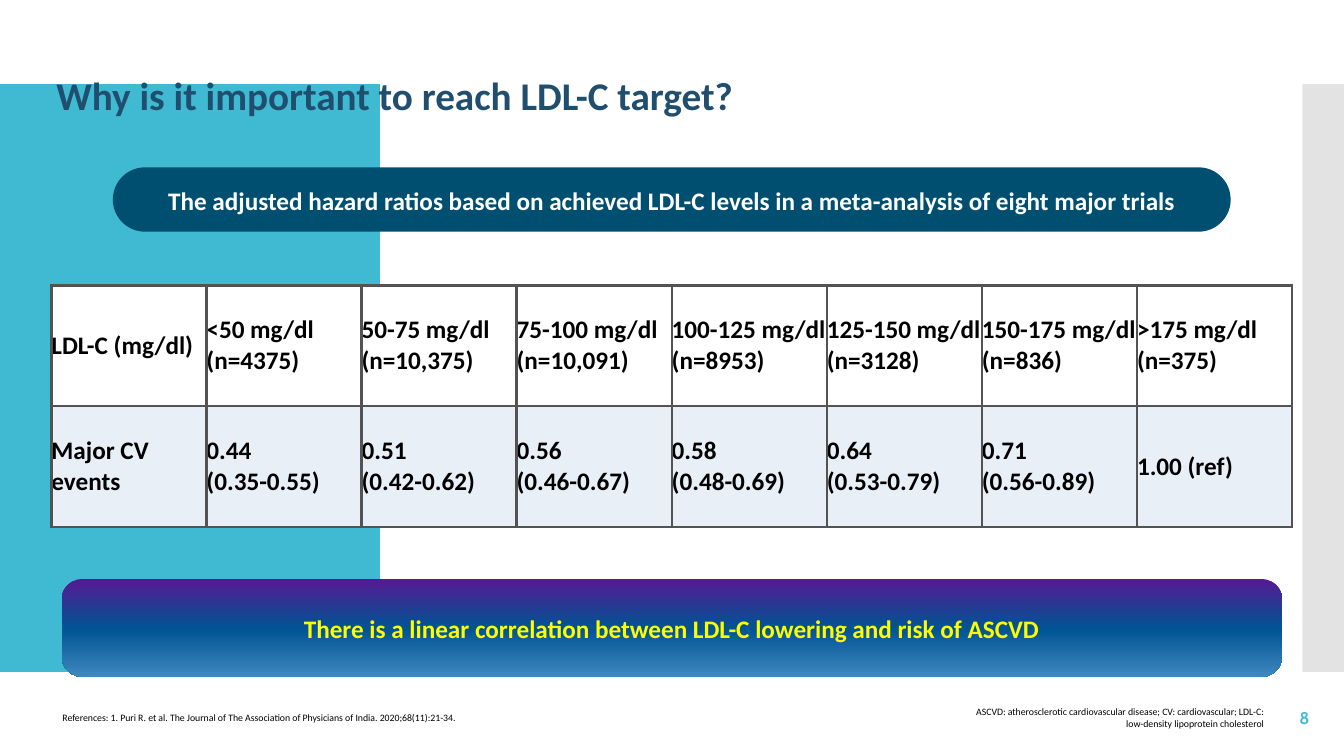
from copy import deepcopy
from dataclasses import dataclass
from typing import Optional

from lxml.etree import SubElement
from pptx import Presentation
from pptx.dml.color import RGBColor
from pptx.enum.shapes import MSO_SHAPE
from pptx.enum.text import MSO_ANCHOR, PP_ALIGN
from pptx.oxml.ns import qn
from pptx.util import Pt


@dataclass(frozen=True)
class Theme:
    font: str = "Calibri"
    number_font: str = "Cabin"
    title_size: float = 28
    body_size: float = 18
    number_size: float = 12
    note_size: float = 7
    teal: str = "40BAD2"
    gray: str = "C8C8C8"
    navy: str = "004F71"
    title: str = "204E6E"
    yellow: str = "FFFB00"
    white: str = "FFFFFF"
    black: str = "000000"
    row_tint: str = "E9EFF7"
    border: str = "535353"
    gradient: tuple = ((0.01, "531B93"), (0.51, "005493"), (1.0, "3F87BF"))


THEME = Theme()


@dataclass(frozen=True)
class Frame:
    left: float
    top: float
    width: float
    height: float

    def lengths(self) -> tuple:
        return Pt(self.left), Pt(self.top), Pt(self.width), Pt(self.height)


@dataclass(frozen=True)
class Panel:
    frame: Frame
    color: Optional[str] = None
    rounding: Optional[float] = None
    opacity: Optional[int] = None


@dataclass(frozen=True)
class Label:
    frame: Frame
    text: str
    size: float
    color: str
    bold: bool = True
    align: PP_ALIGN = PP_ALIGN.LEFT
    font: str = THEME.font
    wrap: bool = True


PANELS = (
    Panel(Frame(0, 60, 271.4, 420), THEME.teal),
    Panel(Frame(930.2, 60, 29.8, 420), THEME.gray, opacity=50),
    Panel(Frame(80.6, 119.5, 798.5, 46), THEME.navy, rounding=0.5),
    Panel(Frame(44, 413.5, 872, 70), rounding=0.214),
)

LABELS = (
    Label(Frame(36.7, 50.4, 791.3, 35.3), "Why is it important to reach LDL-C target?",
          THEME.title_size, THEME.title),
    Label(Frame(920.9, 502.4, 18, 21), "8", THEME.number_size, THEME.teal,
          align=PP_ALIGN.RIGHT, font=THEME.number_font),
    Label(Frame(41, 505.4, 352.8, 14.4),
          "References: 1. Puri R. et al. The Journal of The Association of Physicians of India. "
          "2020;68(11):21-34.", THEME.note_size, THEME.black, bold=False),
    Label(Frame(681.8, 500.4, 224.6, 23.8),
          "ASCVD: atherosclerotic cardiovascular disease; CV: cardiovascular; "
          "LDL-C: low-density lipoprotein cholesterol",
          THEME.note_size, THEME.black, bold=False, align=PP_ALIGN.RIGHT),
    Label(Frame(110.2, 435.9, 739.4, 26),
          "There is a linear correlation between LDL-C lowering and risk of ASCVD",
          THEME.body_size, THEME.yellow, align=PP_ALIGN.CENTER),
    Label(Frame(115.2, 129.9, 729.4, 26),
          "The adjusted hazard ratios based on achieved LDL-C levels in a meta-analysis of "
          "eight major trials", THEME.body_size, THEME.white, align=PP_ALIGN.CENTER, wrap=False),
)

TABLE_FRAME = Frame(36.7, 203.8, 886.4, 172.6)
ROWS = (
    ("LDL-C (mg/dl)", "<50 mg/dl (n=4375)", "50-75 mg/dl (n=10,375)", "75-100 mg/dl (n=10,091)",
     "100-125 mg/dl (n=8953)", "125-150 mg/dl (n=3128)", "150-175 mg/dl (n=836)",
     ">175 mg/dl (n=375)"),
    ("Major CV events", "0.44\n(0.35-0.55)", "0.51\n(0.42-0.62)", "0.56\n(0.46-0.67)",
     "0.58\n(0.48-0.69)", "0.64\n(0.53-0.79)", "0.71\n(0.56-0.89)", "1.00 (ref)"),
)
ROW_FILLS = (THEME.white, THEME.row_tint)


def add_span(para, text: str, size: float, color: str, bold: bool, font: str) -> None:
    """Add one styled run to a paragraph."""
    span = para.add_run()
    span.text = text
    span.font.name = font
    span.font.size = Pt(size)
    span.font.bold = bold
    span.font.color.rgb = RGBColor.from_string(color)


def fill_gradient(shape) -> None:
    """Fill a shape with the theme gradient from top to bottom."""
    fill = shape.fill
    fill.gradient()
    fill.gradient_angle = 270
    stop_list = shape._element.spPr.find(qn("a:gradFill")).find(qn("a:gsLst"))
    stop_list.append(deepcopy(stop_list[-1]))
    for stop, (position, color) in zip(fill.gradient_stops, THEME.gradient):
        stop.position = position
        stop.color.rgb = RGBColor.from_string(color)


def add_panel(page, panel: Panel) -> None:
    """Draw a borderless rectangle, rounded when asked."""
    kind = MSO_SHAPE.RECTANGLE if panel.rounding is None else MSO_SHAPE.ROUNDED_RECTANGLE
    shape = page.shapes.add_shape(kind, *panel.frame.lengths())
    shape.shadow.inherit = False
    shape.line.fill.background()
    if panel.rounding is not None:
        shape.adjustments[0] = panel.rounding
    if panel.color is None:
        fill_gradient(shape)
        return
    shape.fill.solid()
    shape.fill.fore_color.rgb = RGBColor.from_string(panel.color)
    if panel.opacity is not None:
        color = shape._element.spPr.find(qn("a:solidFill"))[0]
        SubElement(color, qn("a:alpha"), val=str(panel.opacity * 1000))


def add_label(page, label: Label) -> None:
    """Draw a text box centred vertically on its text."""
    box = page.shapes.add_textbox(*label.frame.lengths()).text_frame
    box.word_wrap = label.wrap
    box.vertical_anchor = MSO_ANCHOR.MIDDLE
    box.margin_left = box.margin_right = box.margin_top = box.margin_bottom = Pt(3.6)
    para = box.paragraphs[0]
    para.alignment = label.align
    add_span(para, label.text, label.size, label.color, label.bold, label.font)


def style_cell(cell, color: str) -> None:
    """Give a cell its borders, fill and tight margins."""
    cell.margin_left = cell.margin_right = cell.margin_top = cell.margin_bottom = Pt(0)
    cell.vertical_anchor = MSO_ANCHOR.MIDDLE
    properties = cell._tc.get_or_add_tcPr()
    for side in ("a:lnL", "a:lnR", "a:lnT", "a:lnB"):
        line = SubElement(properties, qn(side), w=str(Pt(2)))
        SubElement(SubElement(line, qn("a:solidFill")), qn("a:srgbClr"), val=THEME.border)
    cell.fill.solid()
    cell.fill.fore_color.rgb = RGBColor.from_string(color)


def add_hazard_table(page) -> None:
    """Draw the table of hazard ratios by LDL-C level."""
    table = page.shapes.add_table(len(ROWS), len(ROWS[0]), *TABLE_FRAME.lengths()).table
    table.first_row = table.horz_banding = False
    for column in table.columns:
        column.width = Pt(TABLE_FRAME.width / len(ROWS[0]))
    for row_index, (texts, color) in enumerate(zip(ROWS, ROW_FILLS)):
        table.rows[row_index].height = Pt(TABLE_FRAME.height / len(ROWS))
        for column_index, text in enumerate(texts):
            cell = table.cell(row_index, column_index)
            style_cell(cell, color)
            frame = cell.text_frame
            for line_index, line in enumerate(text.split("\n")):
                para = frame.add_paragraph() if line_index else frame.paragraphs[0]
                add_span(para, line, THEME.body_size, THEME.black, True, THEME.font)


def main() -> None:
    """Build the slide and save the deck."""
    deck = Presentation()
    deck.slide_width, deck.slide_height = Pt(960), Pt(540)
    page = deck.slides.add_slide(deck.slide_layouts[6])
    for panel in PANELS:
        add_panel(page, panel)
    for label in LABELS:
        add_label(page, label)
    add_hazard_table(page)
    deck.save("out.pptx")


if __name__ == "__main__":
    main()
